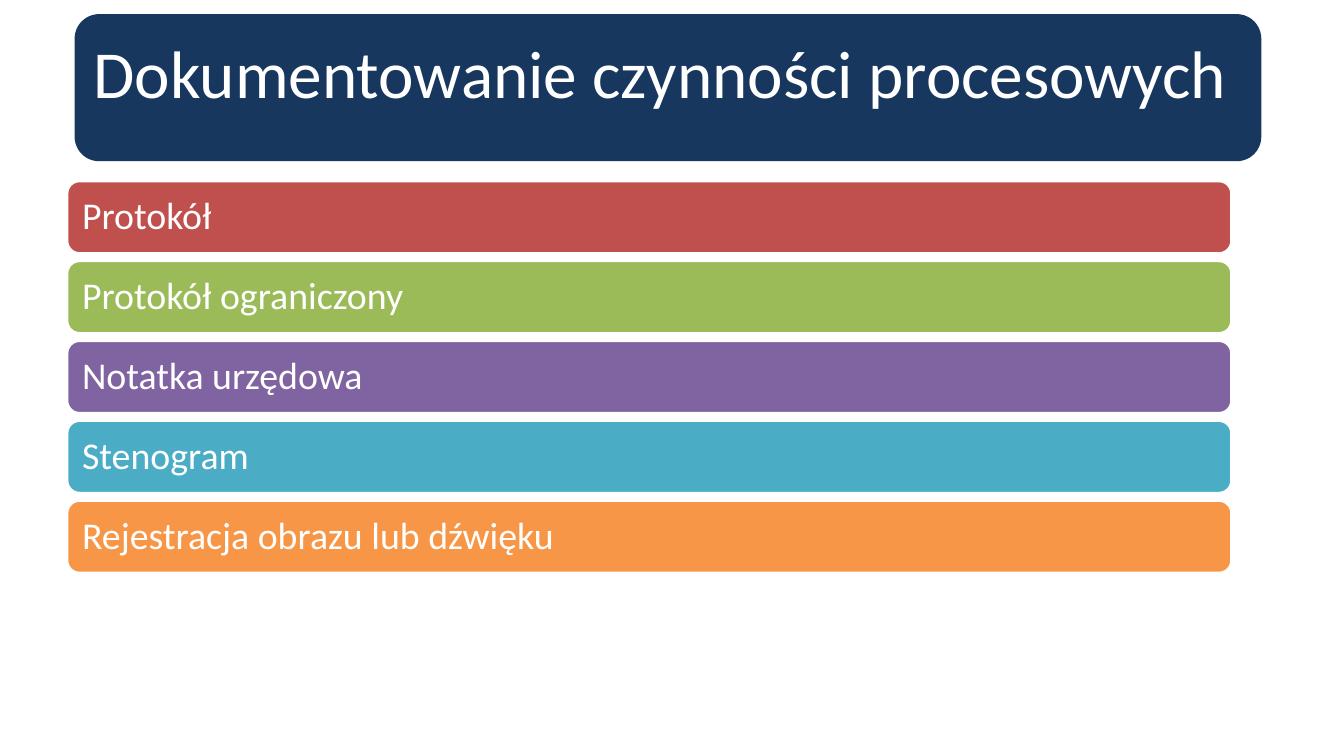
from dataclasses import dataclass

from pptx import Presentation
from pptx.dml.color import RGBColor as RGB
from pptx.enum.shapes import MSO_SHAPE as Shape
from pptx.enum.text import MSO_ANCHOR as Anchor, PP_ALIGN as Align
from pptx.util import Inches, Pt


@dataclass(frozen=True)
class Theme:
    font: str = "Calibri"
    white: str = "FFFFFF"
    navy: str = "17375E"
    bars: tuple = ("C0504D", "9BBB59", "8064A2", "4BACC6", "F79646")
    title: int = 48
    body: int = 27


class Deck:
    def __init__(self, theme):
        self.theme = theme
        self.prs = Presentation()
        self.prs.slide_width = Inches(13.33)
        self.prs.slide_height = Inches(7.5)
        self.slide = self.prs.slides.add_slide(self.prs.slide_layouts[6])

    def panel(self, left, top, width, height, fill):
        box = self.slide.shapes.add_shape(
            Shape.ROUNDED_RECTANGLE,
            Inches(left), Inches(top), Inches(width), Inches(height))
        box.shadow.inherit = False
        box.fill.solid()
        box.fill.fore_color.rgb = RGB.from_string(fill)
        box.line.fill.background()
        frame = box.text_frame
        frame.word_wrap = True
        frame.vertical_anchor = Anchor.MIDDLE
        return box

    def label(self, box, text, size, align):
        para = box.text_frame.paragraphs[0]
        para.alignment = align
        run = para.add_run()
        run.text = text
        run.font.name = self.theme.font
        run.font.size = Pt(size)
        run.font.color.rgb = RGB.from_string(self.theme.white)
        return para

    def title(self, text):
        box = self.panel(0.74, 0.14, 11.77, 1.46, self.theme.navy)
        # The deeper bottom margin lifts the line above the middle.
        box.text_frame.margin_bottom = Inches(0.36)
        self.label(box, text, self.theme.title, Align.CENTER)

    def bar(self, top, text, fill):
        box = self.panel(0.67, top, 11.54, 0.71, fill)
        box.line.color.rgb = RGB.from_string(self.theme.white)
        box.line.width = Pt(1.25)
        frame = box.text_frame
        frame.margin_left = frame.margin_right = Inches(0.11)
        frame.margin_top = frame.margin_bottom = Inches(0.11)
        para = self.label(box, text, self.theme.body, Align.LEFT)
        para.line_spacing = 0.9

    def save(self):
        self.prs.save("out.pptx")


def main():
    theme = Theme()
    deck = Deck(theme)
    deck.title("Dokumentowanie czynności procesowych ")
    forms = (
        "Protokół",
        "Protokół ograniczony",
        "Notatka urzędowa",
        "Stenogram",
        "Rejestracja obrazu lub dźwięku",
    )
    first, last = 1.8, 4.97
    pitch = (last - first) / (len(forms) - 1)
    for row, (text, fill) in enumerate(zip(forms, theme.bars)):
        deck.bar(first + row * pitch, text, fill)
    deck.save()


if __name__ == "__main__":
    main()
